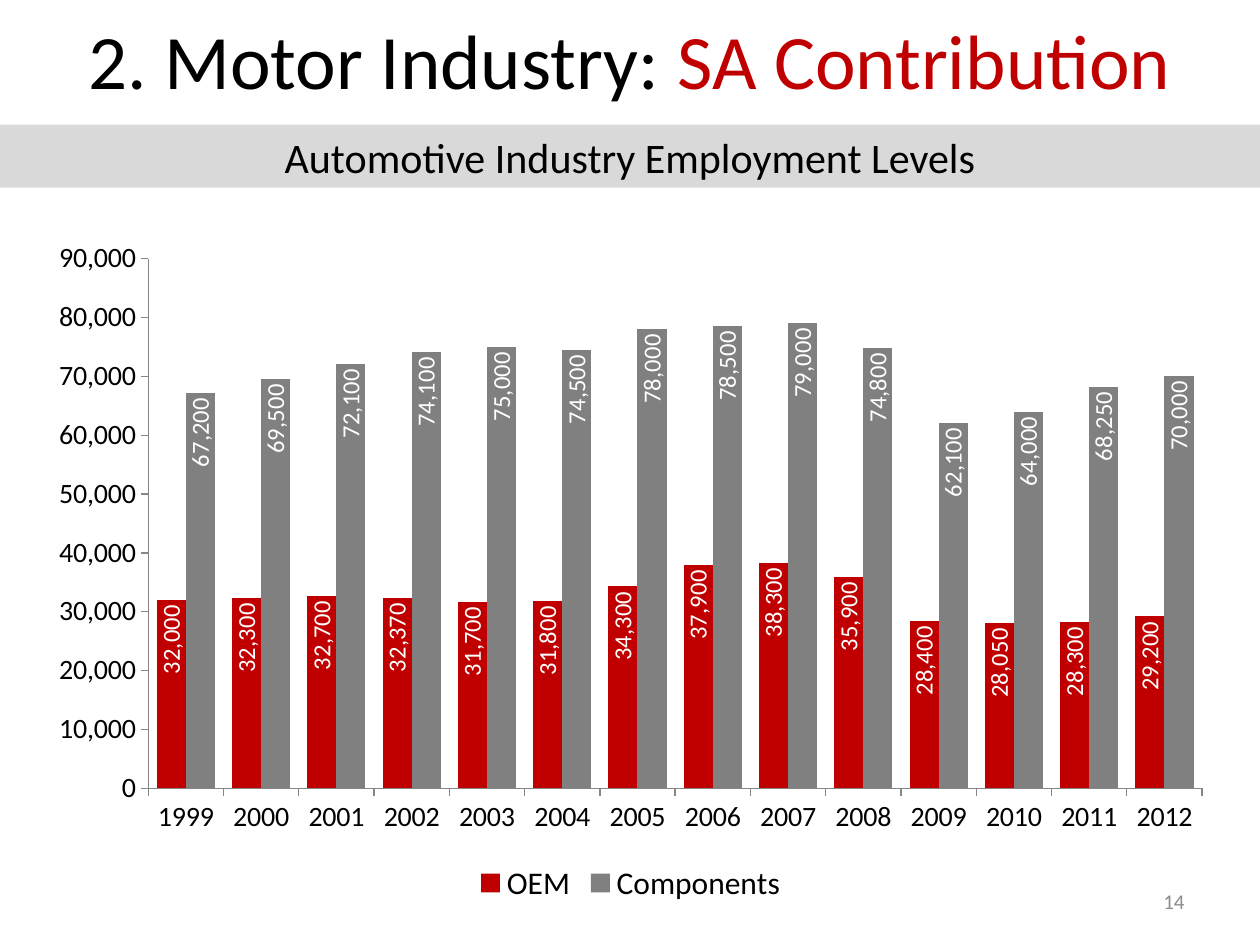
from pptx import Presentation
from pptx.chart.data import CategoryChartData
from pptx.dml.color import RGBColor
from pptx.enum import chart as ch, shapes, text
from pptx.util import Inches, Pt

COLORS = {"black": "000000", "red": "C00000", "gray": "808080", "band": "D9D9D9",
          "number": "8C8C8C", "axis": "868686", "white": "FFFFFF"}
FONT = "Calibri"
TITLE = [("2. Motor Industry: ", "black"), ("SA Contribution", "red")]
SUBTITLE = "Automotive Industry Employment Levels"
PAGE_NUMBER = "14"
YEARS = [str(year) for year in range(1999, 2013)]
EMPLOYMENT = [
    ("OEM", "red", [32000, 32300, 32700, 32370, 31700, 31800, 34300,
                    37900, 38300, 35900, 28400, 28050, 28300, 29200]),
    ("Components", "gray", [67200, 69500, 72100, 74100, 75000, 74500, 78000,
                            78500, 79000, 74800, 62100, 64000, 68250, 70000]),
]
NUMBER_FORMAT = "#,##0"


def rgb(name):
    return RGBColor.from_string(COLORS[name])


def style(font, size, color="black"):
    font.name, font.size, font.bold = FONT, Pt(size), False
    font.color.rgb = rgb(color)


def write(shape, runs, size, align):
    """Fill a shape with one line of (words, colour) runs, centred vertically."""
    frame = shape.text_frame
    frame.word_wrap = True
    frame.vertical_anchor = text.MSO_ANCHOR.MIDDLE
    line = frame.paragraphs[0]
    line.alignment = align
    style(line.font, size, runs[0][1])
    for words, color in runs:
        run = line.add_run()
        run.text = words
        run.font.color.rgb = rgb(color)


def add_employment_chart(slide):
    data = CategoryChartData(number_format=NUMBER_FORMAT)
    data.categories = YEARS
    for name, _, values in EMPLOYMENT:
        data.add_series(name, values)
    chart = slide.shapes.add_chart(
        ch.XL_CHART_TYPE.COLUMN_CLUSTERED, Inches(0.28), Inches(1.81),
        Inches(9.45), Inches(5.4), data).chart
    style(chart.font, 18)
    chart.has_title = False
    chart.has_legend = True
    chart.legend.position = ch.XL_LEGEND_POSITION.BOTTOM
    chart.legend.include_in_layout = False
    style(chart.legend.font, 18)

    for axis in (chart.category_axis, chart.value_axis):
        axis.has_major_gridlines = False
        axis.major_tick_mark = ch.XL_TICK_MARK.OUTSIDE
        axis.minor_tick_mark = ch.XL_TICK_MARK.NONE
        axis.format.line.color.rgb = rgb("axis")
        style(axis.tick_labels.font, 16)
    scale = chart.value_axis
    scale.minimum_scale, scale.maximum_scale, scale.major_unit = 0, 90000, 10000
    scale.tick_labels.number_format = NUMBER_FORMAT
    scale.tick_labels.number_format_is_linked = False

    plot = chart.plots[0]
    plot.gap_width, plot.overlap = 59, 0
    plot.vary_by_categories = False
    for series, (_, color, _) in zip(plot.series, EMPLOYMENT):
        series.format.fill.solid()
        series.format.fill.fore_color.rgb = rgb(color)
        labels = series.data_labels
        labels.show_value = True
        labels.position = ch.XL_LABEL_POSITION.INSIDE_END
        labels.number_format = NUMBER_FORMAT
        labels.number_format_is_linked = False
        style(labels.font, 14, "white")
        body = labels._element.xpath("c:txPr/a:bodyPr")[0]
        body.set("rot", "-5400000")
        body.set("vert", "horz")


def main():
    deck = Presentation()
    deck.slide_width, deck.slide_height = Inches(10), Inches(7.5)
    slide = deck.slides.add_slide(deck.slide_layouts[6])
    add_employment_chart(slide)

    title = slide.shapes.add_textbox(0, 0, deck.slide_width, Inches(0.94))
    write(title, TITLE, 44, text.PP_ALIGN.CENTER)

    band = slide.shapes.add_shape(shapes.MSO_SHAPE.RECTANGLE, 0, Inches(0.99),
                                  deck.slide_width, Inches(0.5))
    band.shadow.inherit = False
    band.fill.solid()
    band.fill.fore_color.rgb = rgb("band")
    band.line.fill.background()
    write(band, [(SUBTITLE, "black")], 24, text.PP_ALIGN.CENTER)

    number = slide.shapes.add_textbox(Inches(7.17), Inches(6.95), Inches(2.33), Inches(0.4))
    write(number, [(PAGE_NUMBER, "number")], 12, text.PP_ALIGN.RIGHT)
    deck.save("out.pptx")


if __name__ == "__main__":
    main()
